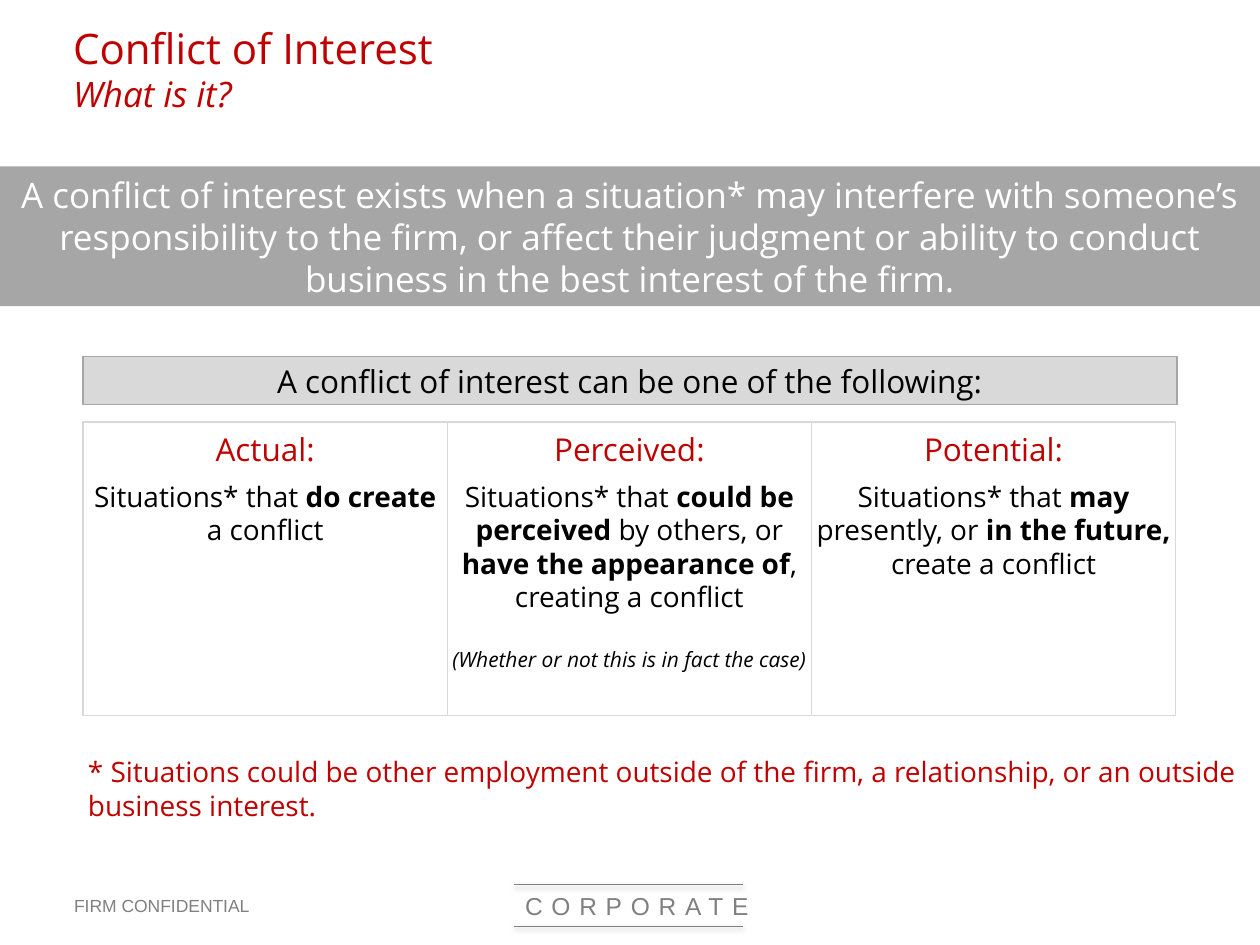
from lxml import etree
from pptx import Presentation
from pptx.dml.color import RGBColor
from pptx.enum import shapes, text
from pptx.oxml.ns import qn
from pptx.util import Inches, Pt

RED = RGBColor(0xC0, 0x00, 0x00)
BLACK = RGBColor(0x00, 0x00, 0x00)
WHITE = RGBColor(0xFF, 0xFF, 0xFF)
BANNER_GRAY = RGBColor(0xA6, 0xA6, 0xA6)
LIGHT_GRAY = RGBColor(0xD9, 0xD9, 0xD9)
FOOTER_GRAY = RGBColor(0x80, 0x80, 0x80)

LEFT, CARD_WIDTH = 0.66, 2.89
CENTER, START, END = text.PP_ALIGN.CENTER, text.PP_ALIGN.LEFT, text.PP_ALIGN.RIGHT

# Each card: heading, body as (words, bold) runs, small note
CARDS = [
    ("Actual:", [("Situations* that ", False), ("do create ", True),
                 ("a conflict", False)], None),
    ("Perceived:", [("Situations* that ", False), ("could be perceived ", True),
                    ("by others, or ", False), ("have the appearance of", True),
                    (", creating a conflict", False)],
     "(Whether or not this is in fact the case)"),
    ("Potential:", [("Situations* that ", False), ("may ", True),
                    ("presently, or ", False), ("in the future, ", True),
                    ("create a conflict", False)], None),
]


def style(font, size, color, name="Open Sans", bold=False, italic=False):
    font.size, font.name = Pt(size), name
    font.bold, font.italic = bold, italic
    font.color.rgb = color


def add_run(paragraph, words, size, color, **options):
    run = paragraph.add_run()
    run.text = words
    style(run.font, size, color, **options)
    return run


def set_margins(frame, side, top):
    frame.margin_left = frame.margin_right = Inches(side)
    frame.margin_top = frame.margin_bottom = Inches(top)


def add_panel(slide, box, fill, line=None, line_width=1):
    panel = slide.shapes.add_shape(shapes.MSO_SHAPE.RECTANGLE, *map(Inches, box))
    panel.shadow.inherit = False
    panel.fill.solid()
    panel.fill.fore_color.rgb = fill
    if line is None:
        panel.line.fill.background()
    else:
        panel.line.color.rgb = line
        panel.line.width = Pt(line_width)
    frame = panel.text_frame
    frame.word_wrap = True
    frame.paragraphs[0].alignment = CENTER
    return frame


def add_label(slide, box, words, size, color, align=START,
              anchor=text.MSO_ANCHOR.TOP, **options):
    frame = slide.shapes.add_textbox(*map(Inches, box)).text_frame
    frame.word_wrap = True
    frame.vertical_anchor = anchor
    frame.paragraphs[0].alignment = align
    return add_run(frame.paragraphs[0], words, size, color, **options)


def add_card(slide, left, heading, body, note):
    frame = add_panel(slide, (left, 3.35, CARD_WIDTH, 2.33), WHITE, LIGHT_GRAY, 0.75)
    set_margins(frame, 0.02, 0.1)
    frame.vertical_anchor = text.MSO_ANCHOR.TOP
    title = frame.paragraphs[0]
    title.line_spacing = 0.9
    title.space_after = Pt(6)
    add_run(title, heading, 18, RED)
    description = frame.add_paragraph()
    description.alignment = CENTER
    for words, bold in body:
        add_run(description, words, 16, BLACK, bold=bold)
    if note:
        remark = frame.add_paragraph()
        remark.alignment = CENTER
        remark.space_before = Pt(19)
        add_run(remark, note, 12, BLACK, italic=True)


def add_footer_rule(slide, y):
    rule = slide.shapes.add_connector(
        shapes.MSO_CONNECTOR.STRAIGHT,
        Inches(4.08), Inches(y), Inches(5.9), Inches(y))
    rule.line.color.rgb = FOOTER_GRAY
    rule.line.width = Pt(0.5)
    # Soft shadow straight below the rule
    effects = etree.SubElement(rule._element.spPr, qn("a:effectLst"))
    shadow = etree.SubElement(
        effects, qn("a:outerShdw"), blurRad=str(Pt(3.1)), dist=str(Pt(1.6)),
        dir="5400000", rotWithShape="0")
    tint = etree.SubElement(shadow, qn("a:srgbClr"), val="000000")
    etree.SubElement(tint, qn("a:alpha"), val="38000")


def set_title(slide):
    title = slide.shapes.title
    title.left, title.top = Inches(0.48), Inches(0.07)
    title.width, title.height = Inches(8.33), Inches(0.95)
    frame = title.text_frame
    frame.text = "Conflict of Interest\vWhat is it?"
    frame.auto_size = text.MSO_AUTO_SIZE.NONE
    frame.vertical_anchor = text.MSO_ANCHOR.MIDDLE
    heading = frame.paragraphs[0]
    heading.alignment = START
    topic, question = heading.runs
    style(topic.font, 24, RED)
    style(question.font, 20, RED, italic=True)


def main():
    prs = Presentation()
    prs.slide_width, prs.slide_height = Inches(10), Inches(7.5)
    slide = prs.slides.add_slide(prs.slide_layouts[5])

    # Footer
    add_label(slide, (0.49, 7.05, 1.63, 0.27), "FIRM CONFIDENTIAL", 10, FOOTER_GRAY,
              anchor=text.MSO_ANCHOR.MIDDLE, name="Arial")
    division = add_label(slide, (3.97, 7.02, 2.07, 0.57), "CORPORATE", 14,
                         FOOTER_GRAY, align=END, name="Arial")
    division._r.get_or_add_rPr().set("spc", "500")
    for y in (7.02, 7.35):
        add_footer_rule(slide, y)

    set_title(slide)

    # Definition banner
    banner = add_panel(slide, (0, 1.32, 10, 1.11), BANNER_GRAY)
    add_run(banner.paragraphs[0],
            "A conflict of interest exists when a situation* may interfere with "
            "someone’s responsibility to the firm, or affect their judgment or "
            "ability to conduct business in the best interest of the firm.",
            20, WHITE)

    # Three kinds of conflict under a shared header
    header = add_panel(slide, (LEFT, 2.83, 8.68, 0.38), LIGHT_GRAY, BANNER_GRAY)
    set_margins(header, 0.07, 0)
    add_run(header.paragraphs[0],
            "A conflict of interest can be one of the following:", 18, BLACK)
    for column, card in enumerate(CARDS):
        add_card(slide, LEFT + column * CARD_WIDTH, *card)

    # Footnote
    add_label(slide, (0.6, 5.94, 9.4, 0.64),
              "* Situations could be other employment outside of the firm, a "
              "relationship, or an outside business interest.", 16, RED)

    prs.save("out.pptx")


if __name__ == "__main__":
    main()
